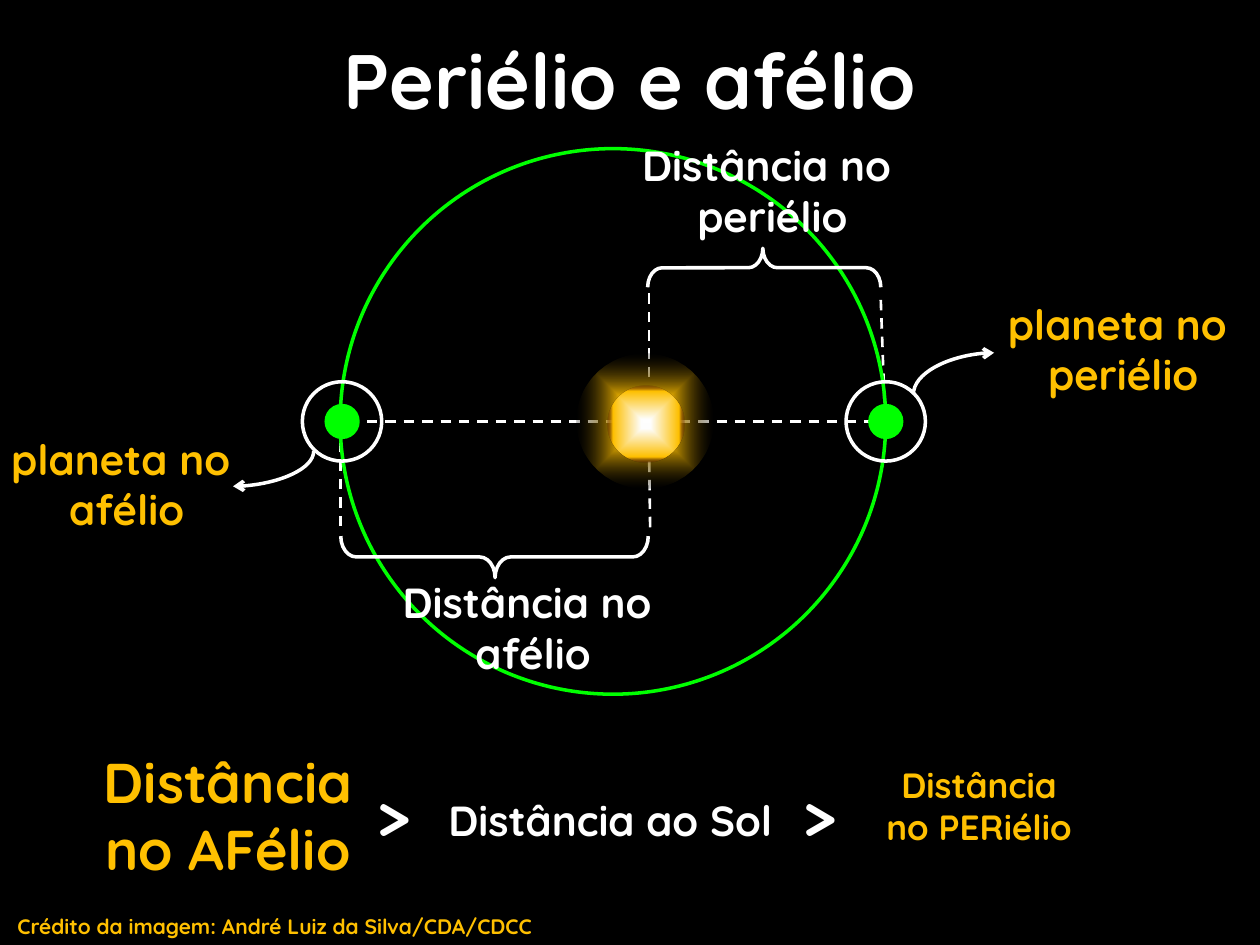
from lxml import etree
from pptx import Presentation
from pptx.dml.color import RGBColor
from pptx.enum.dml import MSO_LINE
from pptx.enum.shapes import MSO_CONNECTOR, MSO_SHAPE
from pptx.enum.text import MSO_AUTO_SIZE, PP_ALIGN
from pptx.oxml import parse_xml
from pptx.oxml.ns import nsdecls, qn
from pptx.util import Inches, Pt

STRAIGHT, CURVE = MSO_CONNECTOR.STRAIGHT, MSO_CONNECTOR.CURVE
OVAL, BRACE = MSO_SHAPE.OVAL, MSO_SHAPE.LEFT_BRACE
DASH = MSO_LINE.DASH
CENTER, LEFT = PP_ALIGN.CENTER, PP_ALIGN.LEFT
GROW, FIXED = MSO_AUTO_SIZE.SHAPE_TO_FIT_TEXT, MSO_AUTO_SIZE.NONE
FONT = "Quicksand"
BLACK, WHITE, GREEN, GOLD = "000000", "FFFFFF", "00FF00", "FFC000"


def rgb(color):
    return RGBColor.from_string(color)


def add_shape(shapes, kind, box, fill=None, line=None, rotation=0):
    sp = shapes.add_shape(kind, *map(Inches, box))
    sp.shadow.inherit = False
    sp.rotation = rotation
    if fill:
        sp.fill.solid()
        sp.fill.fore_color.rgb = rgb(fill)
    else:
        sp.fill.background()
    if line:
        sp.line.color.rgb = rgb(line)
        sp.line.width = Pt(2)
    else:
        sp.line.fill.background()
    return sp


def add_line(s, kind, start, end, width):
    cxn = s.shapes.add_connector(kind, *map(Inches, start + end))
    cxn.line.color.rgb = rgb(WHITE)
    cxn.line.width = Pt(width)
    etree.SubElement(cxn._element.spPr, qn("a:effectLst"))
    return cxn


def add_dashed(s, start, end):
    add_line(s, STRAIGHT, start, end, 1.5).line.dash_style = DASH


def add_pointer(s, tip, ring_point):
    """Quarter curve that leaves the ring vertically and reaches the tip."""
    cxn = add_line(s, CURVE, tip, ring_point, 2)
    cxn._element.spPr.find(qn("a:prstGeom")).set("prst", "curvedConnector2")
    head = etree.SubElement(cxn.line._get_or_add_ln(), qn("a:headEnd"))
    head.set("type", "arrow")


def add_text(s, box, lines, size, color=WHITE, align=CENTER, auto_size=GROW):
    tb = s.shapes.add_textbox(*map(Inches, box))
    tf = tb.text_frame
    tf.word_wrap = True
    tf.auto_size = auto_size
    tf.text = "\n".join(lines)
    for p in tf.paragraphs:
        p.alignment = align
        for r in p.runs:
            style_run(r, size, color)
    return tb


def style_run(r, size, color):
    r.font.name = FONT
    r.font.size = Pt(size)
    r.font.bold = True
    r.font.color.rgb = rgb(color)


def add_glow(shapes, box, stops):
    """Ellipse with a gradient; stops are (position %, colour, opacity %)."""
    sp = add_shape(shapes, OVAL, box)
    gs = "".join(
        f'<a:gs pos="{pos * 1000}"><a:srgbClr val="{color}">'
        f'<a:alpha val="{alpha * 1000}"/></a:srgbClr></a:gs>'
        for pos, color, alpha in stops)
    grad = parse_xml(
        f'<a:gradFill {nsdecls("a")} rotWithShape="1"><a:gsLst>{gs}</a:gsLst>'
        '<a:path path="shape"><a:fillToRect l="50000" t="50000" r="50000" '
        'b="50000"/></a:path></a:gradFill>')
    spPr = sp._element.spPr
    spPr.replace(spPr.find(qn("a:noFill")), grad)


def add_sun(s, x, y, w, h):
    group = s.shapes.add_group_shape()
    add_glow(group.shapes, (x, y, w, h),
             [(7, WHITE, 100), (32, GOLD, 100), (100, BLACK, 23)])
    core = 0.61
    add_glow(group.shapes, (x + 0.24, y + 0.25, core, core),
             [(12, WHITE, 100), (85, GOLD, 100), (100, "4D0808", 17)])


def add_planet(s, cx, cy):
    for size, fill, line in ((0.63, None, WHITE), (0.28, GREEN, None)):
        add_shape(s.shapes, OVAL,
                  (cx - size / 2, cy - size / 2, size, size), fill, line)


def add_brace(s, box, rotation, middle):
    brace = add_shape(s.shapes, BRACE, box, line=WHITE, rotation=rotation)
    brace.adjustments[0] = 0.373
    brace.adjustments[1] = middle


def add_orbit(s, x, y, size):
    left, right, mid, sun = x, x + size, y + size / 2, x + 2.45

    # Dashed guides
    add_dashed(s, (left, mid + 0.83), (left, mid))
    add_dashed(s, (sun + 0.01, mid + 0.84), (sun, mid + 0.12))
    add_dashed(s, (sun, mid - 0.35), (sun, mid - 1.05))
    add_dashed(s, (right, mid + 0.14), (right - 0.04, mid - 0.98))
    add_dashed(s, (left - 0.08, mid), (right + 0.1, mid))

    # Orbit and distance braces
    add_shape(s.shapes, OVAL, (x, y, size, size), line=GREEN)
    add_brace(s, (5.91, 1.2, 0.31, 1.85), 90, 0.506)
    add_brace(s, (3.76, 3.2, 0.33, 2.44), 270, 0.502)
    add_text(s, (4.59, 1.06, 3.08, 0.91), ["Distância no ", "periélio"], 24)
    add_text(s, (2.69, 4.53, 3.08, 0.91), ["Distância no ", "afélio"], 24)

    # Planets and their labels
    add_planet(s, right, mid)
    add_pointer(s, (7.89, 2.8), (7.25, 3.13))
    add_text(s, (7.63, 2.32, 2.57, 0.91), ["planeta no ", "periélio"], 24, GOLD)
    add_planet(s, left + 0.015, mid)
    add_pointer(s, (1.85, 3.86), (2.49, 3.58))
    add_text(s, (-0.28, 3.39, 2.57, 0.91), ["planeta no ", "afélio"], 24, GOLD)

    add_sun(s, 4.58, 2.81, 1.08, 1.07)


def add_comparison(s, x, y):
    add_text(s, (x, y, 2.28, 1.18), ["Distância ", "no AFélio"], 32, GOLD)
    add_text(s, (x + 5.99, y + 0.13, 2.3, 0.77),
             ["Distância ", "no PERiélio "], 20, GOLD)

    # Middle line, spaced with tab stops
    tb = add_text(s, (x + 2.23, y + 0.21, 4.25, 0.71), [""], 36, align=LEFT)
    p = tb.text_frame.paragraphs[0]
    for text, size in ((">\t", 36), ("Distância ao Sol\t", 24), (">", 36)):
        r = p.add_run()
        r.text = text
        style_run(r, size, WHITE)
    tabs = etree.SubElement(p._p.get_or_add_pPr(), qn("a:tabLst"))
    for stop in (0.56, 3.38):
        tab = etree.SubElement(tabs, qn("a:tab"))
        tab.set("pos", str(Inches(stop)))
        tab.set("algn", "l")


def main():
    prs = Presentation()
    prs.slide_width, prs.slide_height = Inches(10), Inches(7.5)
    s = prs.slides.add_slide(prs.slide_layouts[6])
    s.background.fill.solid()
    s.background.fill.fore_color.rgb = rgb(BLACK)

    add_orbit(s, 2.7, 1.18, 4.33)
    add_text(s, (0.75, 0.21, 8.5, 1.61), ["Periélio e afélio"], 44,
             auto_size=FIXED)
    add_comparison(s, 0.67, 5.88)
    add_text(s, (0.04, 7.2, 5.28, 0.3),
             ["Crédito da imagem: André Luiz da Silva/CDA/CDCC"], 12, GOLD, LEFT)
    prs.save("out.pptx")


if __name__ == "__main__":
    main()
